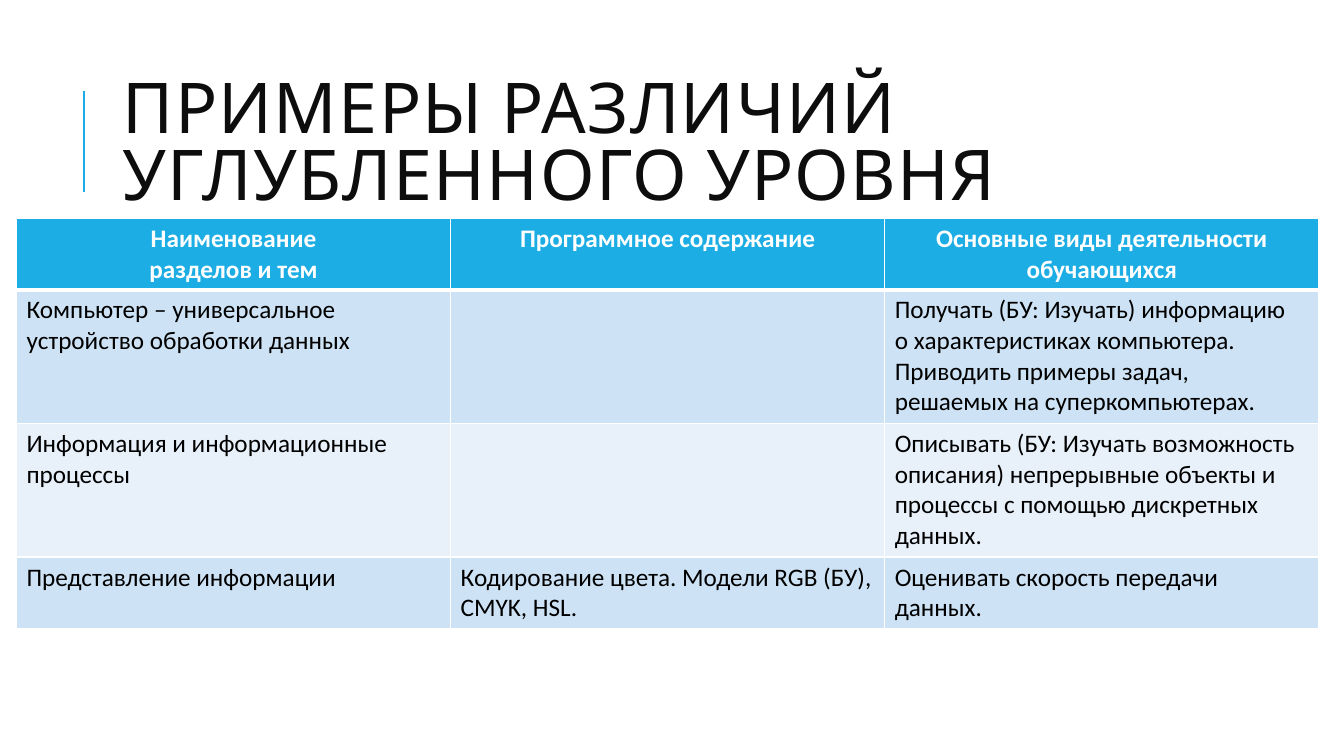
import pptx
import pptx.util
import pptx.dml.color
import pptx.enum.shapes
import pptx.enum.text
import pptx.oxml.ns
import lxml.etree

Pt = pptx.util.Pt

# Content: each cell is a list of paragraphs
TITLE = "ПРИМЕРЫ РАЗЛИЧИЙ УГЛУБЛЕННОГО УРОВНЯ"
HEADER = [
    ["Наименование", "разделов и тем"],
    ["Программное содержание"],
    ["Основные виды деятельности", "обучающихся"],
]
TOPICS = [
    [
        ["Компьютер – универсальное", "устройство обработки данных"],
        [],
        ["Получать (БУ: Изучать) информацию", "о характеристиках компьютера.",
         "Приводить примеры задач,", "решаемых на суперкомпьютерах."],
    ],
    [
        ["Информация и информационные", "процессы"],
        [],
        ["Описывать (БУ: Изучать возможность описания) непрерывные объекты и",
         "процессы с помощью дискретных", "данных."],
    ],
    [
        ["Представление информации"],
        ["Кодирование цвета. Модели RGB (БУ), CMYK, HSL."],
        ["Оценивать скорость передачи", "данных."],
    ],
]
COLORS = {
    "accent": "1CADE4",
    "title": "0D0D0D",
    "header_text": "FFFFFF",
    "body_text": "000000",
    "border": "FFFFFF",
    "bands": ["CDE3F5", "E8F1FA"],
}
ROW_HEIGHTS = [51, 95.5, 95.5, 51]
COLUMN_WIDTH = 310.1


def rgb(value):
    return pptx.dml.color.RGBColor.from_string(value)


def style(paragraph, face, size, color, bold=False):
    paragraph.font.name = face
    paragraph.font.size = Pt(size)
    paragraph.font.bold = bold
    paragraph.font.color.rgb = rgb(color)


def add_borders(cell, bottom):
    properties = cell._tc.get_or_add_tcPr()
    for side, width in (("L", 1), ("R", 1), ("T", 1), ("B", bottom)):
        edge = lxml.etree.SubElement(properties, pptx.oxml.ns.qn(f"a:ln{side}"), w=str(Pt(width)))
        paint = lxml.etree.SubElement(edge, pptx.oxml.ns.qn("a:solidFill"))
        lxml.etree.SubElement(paint, pptx.oxml.ns.qn("a:srgbClr"), val=COLORS["border"])


def fill_cell(cell, lines, is_header, fill):
    add_borders(cell, 3 if is_header else 1)
    cell.fill.solid()
    cell.fill.fore_color.rgb = rgb(fill)
    cell.text = "\n".join(lines)
    for paragraph in cell.text_frame.paragraphs:
        style(paragraph, "Calibri", 18,
              COLORS["header_text" if is_header else "body_text"], is_header)
        if is_header:
            paragraph.alignment = pptx.enum.text.PP_ALIGN.CENTER


def main():
    deck = pptx.Presentation()
    deck.slide_width, deck.slide_height = Pt(960), Pt(540)
    slide = deck.slides.add_slide(deck.slide_layouts[6])

    # Accent rule beside the title
    rule = slide.shapes.add_connector(
        pptx.enum.shapes.MSO_CONNECTOR.STRAIGHT, Pt(60), Pt(136.8), Pt(60), Pt(64.8))
    rule.line.color.rgb = rgb(COLORS["accent"])
    rule.line.width = Pt(1.5)
    lxml.etree.SubElement(rule._element.spPr, pptx.oxml.ns.qn("a:effectLst"))

    # Title
    title = slide.shapes.add_textbox(Pt(80.6), Pt(46.1), Pt(765.4), Pt(118.1)).text_frame
    title.word_wrap = True
    title.vertical_anchor = pptx.enum.text.MSO_ANCHOR.MIDDLE
    heading = title.paragraphs[0]
    heading.line_spacing = 0.8
    wording = heading.add_run()
    wording.text = TITLE
    wording._r.get_or_add_rPr().set("spc", "100")
    style(heading, "Cabin", 50, COLORS["title"])

    # Comparison table
    rows = [HEADER] + TOPICS
    comparison = slide.shapes.add_table(
        len(rows), len(HEADER), Pt(11.8), Pt(155.9),
        Pt(COLUMN_WIDTH * len(HEADER)), Pt(sum(ROW_HEIGHTS))).table
    for column in comparison.columns:
        column.width = Pt(COLUMN_WIDTH)
    for r, (cells, height) in enumerate(zip(rows, ROW_HEIGHTS)):
        comparison.rows[r].height = Pt(height)
        fill = COLORS["bands"][(r - 1) % 2] if r else COLORS["accent"]
        for c, lines in enumerate(cells):
            fill_cell(comparison.cell(r, c), lines, r == 0, fill)

    deck.save("out.pptx")


if __name__ == "__main__":
    main()
